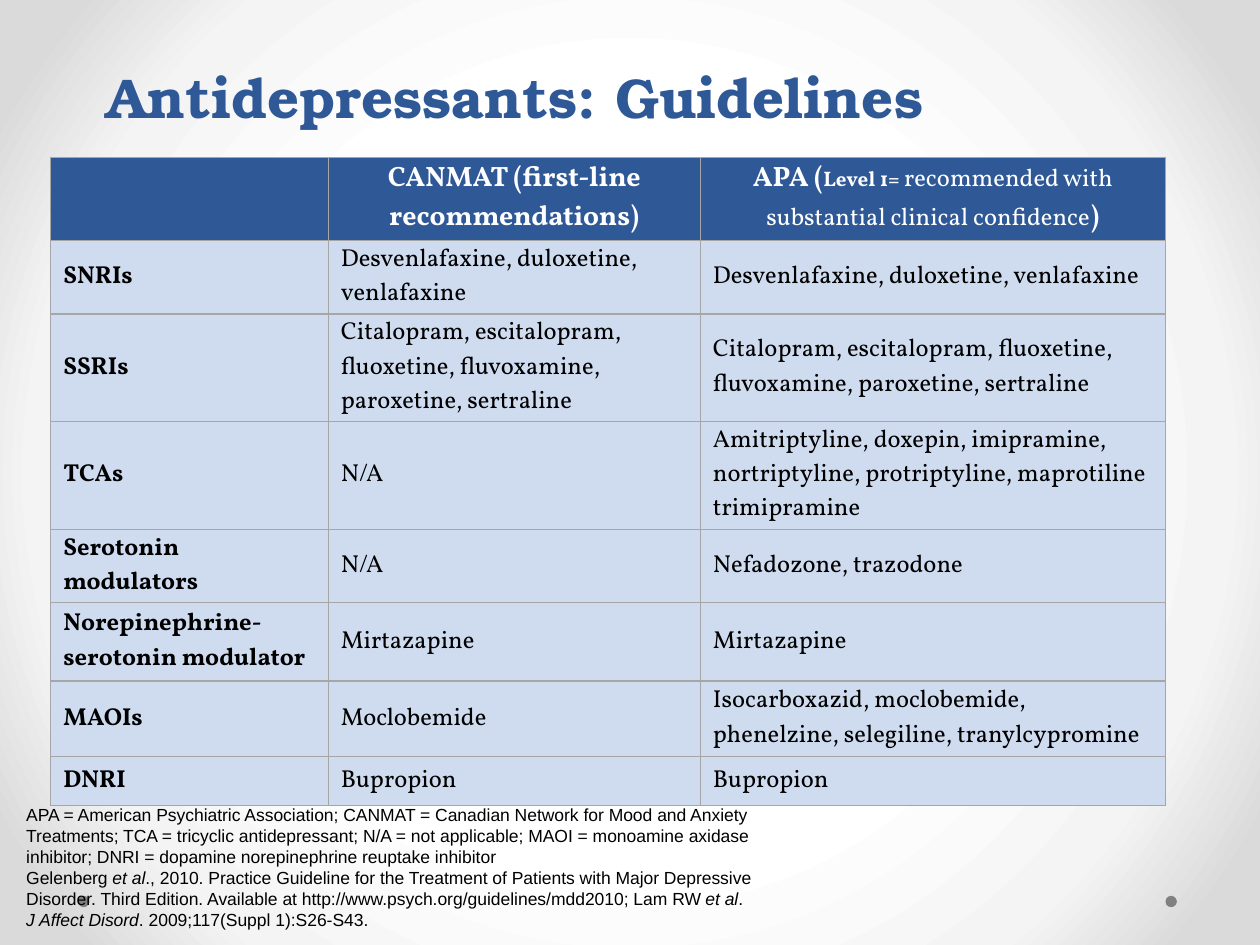
from pptx import Presentation
from pptx.dml.color import RGBColor
from pptx.enum.shapes import MSO_SHAPE
from pptx.enum.text import MSO_ANCHOR, PP_ALIGN
from pptx.oxml import parse_xml
from pptx.oxml.ns import nsdecls
from pptx.util import Pt

OVAL = MSO_SHAPE.OVAL
MIDDLE, BOTTOM = MSO_ANCHOR.MIDDLE, MSO_ANCHOR.BOTTOM
LEFT, CENTER = PP_ALIGN.LEFT, PP_ALIGN.CENTER

COLORS = {"navy": "2F5897", "pale": "CFDCF0", "white": "FFFFFF",
          "black": "000000", "rule": "A6A6A6", "dot": "808080"}
GLOW = [(50, "FFFFFF"), (76, "F4F4F4"), (92, "DADADA")]

TITLE = {"name": "TeX Gyre Bonum", "size": Pt(32), "bold": True, "color": "navy"}
HEAD = {"name": "Vollkorn", "size": Pt(16), "bold": True, "color": "white"}
BODY = {"name": "Vollkorn", "size": Pt(14), "bold": False, "color": "black"}
LABEL = {**BODY, "bold": True}
NOTE = {"name": "Arial", "size": Pt(10), "color": "black"}
CITE = {**NOTE, "italic": True}

COLS = [158.6, 212.6, 265.8]
HEADERS = [
    [],
    [("CANMAT (first-line recommendations)", HEAD)],
    [("APA (", HEAD), ("Level 1= ", {**HEAD, "size": Pt(12)}),
     ("recommended with substantial clinical confidence",
      {**HEAD, "size": Pt(14), "bold": False}), (")", HEAD)],
]
HEAD_ROW = 47.5
SSRIS = "Citalopram, escitalopram, fluoxetine, fluvoxamine, paroxetine, sertraline"
SNRIS = "Desvenlafaxine, duloxetine, venlafaxine"
# Row height, drug class, CANMAT, APA
DRUGS = [
    (42, "SNRIs", SNRIS, SNRIS),
    (61.5, "SSRIs", SSRIS, SSRIS),
    (61.5, "TCAs", "N/A", "Amitriptyline, doxepin, imipramine, nortriptyline, "
     "protriptyline, maprotiline trimipramine"),
    (42, "Serotonin modulators", "N/A", "Nefadozone, trazodone"),
    (44.8, "Norepinephrine-serotonin modulator", "Mirtazapine", "Mirtazapine"),
    (43.2, "MAOIs", "Moclobemide",
     "Isocarboxazid, moclobemide, phenelzine, selegiline, tranylcypromine"),
    (28, "DNRI", "Bupropion", "Bupropion"),
]
NOTES = [
    [("APA = American Psychiatric Association; CANMAT = Canadian Network for Mood "
      "and Anxiety Treatments; TCA = tricyclic antidepressant; N/A = not applicable; "
      "MAOI = monoamine axidase inhibitor; DNRI = dopamine norepinephrine reuptake "
      "inhibitor", NOTE)],
    [("Gelenberg ", NOTE), ("et al", CITE),
     ("., 2010. Practice Guideline for the Treatment of Patients with Major Depressive "
      "Disorder. Third Edition. Available at http://www.psych.org/guidelines/mdd2010; "
      "Lam RW ", NOTE), ("et al", CITE), (". ", NOTE), ("J Affect Disord", CITE),
     (". 2009;117(Suppl 1):S26-S43.", NOTE)],
]


def rgb(key):
    return RGBColor.from_string(COLORS[key])


def write(para, runs, align=LEFT):
    para.alignment = align
    for text, style in runs:
        run = para.add_run()
        run.text = text
        for key, value in style.items():
            if key == "color":
                run.font.color.rgb = rgb(value)
            else:
                setattr(run.font, key, value)


def add_back(slide):
    stops = "".join(f'<a:gs pos="{pos * 1000}"><a:srgbClr val="{color}"/></a:gs>'
                    for pos, color in GLOW)
    slide.element.cSld.insert(0, parse_xml(
        f'<p:bg {nsdecls("p", "a")}><p:bgPr><a:gradFill rotWithShape="1">'
        f'<a:gsLst>{stops}</a:gsLst><a:path path="circle">'
        '<a:fillToRect l="50000" t="50000" r="50000" b="50000"/></a:path>'
        '</a:gradFill><a:effectLst/></p:bgPr></p:bg>'))


def add_dots(slide, left, top, width, size):
    for x in (left, left + width - size):
        dot = slide.shapes.add_shape(OVAL, Pt(x), Pt(top), Pt(size), Pt(size))
        dot.shadow.inherit = False
        dot.fill.solid()
        dot.fill.fore_color.rgb = rgb("dot")
        dot.line.fill.background()


def add_text(slide, box, paras, anchor=None):
    frame = slide.shapes.add_textbox(*map(Pt, box)).text_frame
    frame.word_wrap = True
    if anchor is not None:
        frame.vertical_anchor = anchor
    for i, runs in enumerate(paras):
        write(frame.add_paragraph() if i else frame.paragraphs[0], runs)


def fill_cell(cell, runs, color, align=LEFT):
    margins = {"margin_left": 7.2, "margin_right": 7.2,
               "margin_top": 1.44, "margin_bottom": 1.44}
    for key, value in margins.items():
        setattr(cell, key, Pt(value))
    cell.vertical_anchor = MIDDLE
    write(cell.text_frame.paragraphs[0], runs, align)
    # Borders come before the fill in the cell properties
    props = cell._tc.get_or_add_tcPr()
    for side in ("lnL", "lnR", "lnT", "lnB"):
        props.append(parse_xml(
            f'<a:{side} {nsdecls("a")} w="{Pt(1)}"><a:solidFill>'
            f'<a:srgbClr val="{COLORS["rule"]}"/></a:solidFill></a:{side}>'))
    cell.fill.solid()
    cell.fill.fore_color.rgb = rgb(color)


def add_guide(slide, left, top):
    heights = [HEAD_ROW] + [row[0] for row in DRUGS]
    box = (left, top, sum(COLS), sum(heights))
    table = slide.shapes.add_table(len(heights), len(COLS), *map(Pt, box)).table
    for col, width in zip(table.columns, COLS):
        col.width = Pt(width)
    for row, height in zip(table.rows, heights):
        row.height = Pt(height)
    for c, runs in enumerate(HEADERS):
        fill_cell(table.cell(0, c), runs, "navy", CENTER)
    for r, (_, *texts) in enumerate(DRUGS, 1):
        for c, text in enumerate(texts):
            fill_cell(table.cell(r, c), [(text, BODY if c else LABEL)], "pale")


def main():
    deck = Presentation()
    deck.slide_width, deck.slide_height = Pt(720), Pt(540)
    slide = deck.slides.add_slide(deck.slide_layouts[6])
    add_back(slide)
    add_dots(slide, 44.6, 511.9, 627.9, 6.5)
    add_text(slide, (54, 17.3, 612, 60.5),
             [[("Antidepressants: Guidelines", TITLE)]], BOTTOM)
    add_guide(slide, 29, 90)
    add_text(slide, (7.9, 455.8, 428.4, 79.9), NOTES)
    deck.save("out.pptx")


if __name__ == "__main__":
    main()
